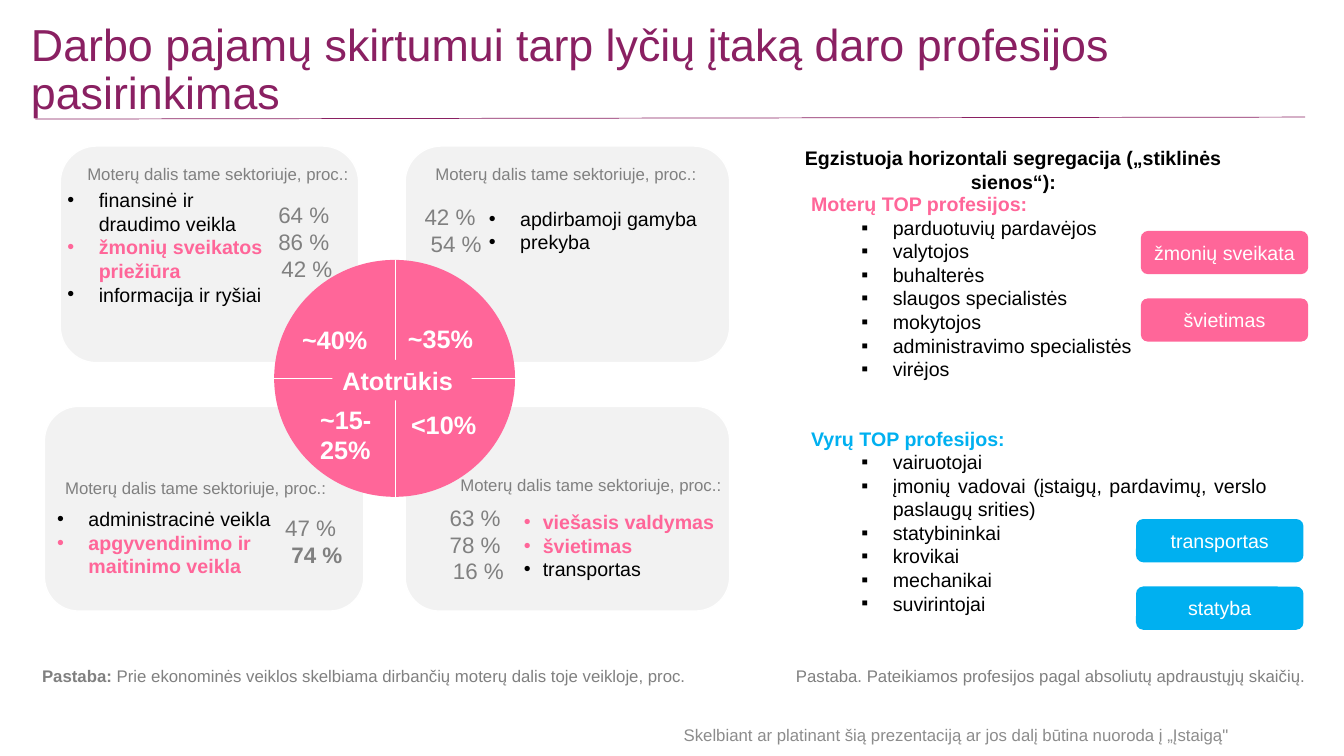
from dataclasses import dataclass, field

from lxml import etree
from pptx import Presentation
from pptx.dml.color import RGBColor
from pptx.enum.shapes import MSO_CONNECTOR, MSO_SHAPE
from pptx.enum.text import MSO_ANCHOR, MSO_AUTO_SIZE, PP_ALIGN
from pptx.oxml.ns import qn
from pptx.util import Cm, Pt

LEFT, CENTER, JUSTIFY = PP_ALIGN.LEFT, PP_ALIGN.CENTER, PP_ALIGN.JUSTIFY
TOP, MIDDLE = MSO_ANCHOR.TOP, MSO_ANCHOR.MIDDLE
GROW, FIXED = MSO_AUTO_SIZE.SHAPE_TO_FIT_TEXT, MSO_AUTO_SIZE.NONE
ROUNDED, OVAL, RECT = MSO_SHAPE.ROUNDED_RECTANGLE, MSO_SHAPE.OVAL, MSO_SHAPE.RECTANGLE
STRAIGHT = MSO_CONNECTOR.STRAIGHT

PLUM = RGBColor(0x8A, 0x20, 0x62)
PINK = RGBColor(0xFF, 0x66, 0x99)
BLUE = RGBColor(0x00, 0xB0, 0xF0)
GRAY = RGBColor(0x80, 0x80, 0x80)
FOOTER_GRAY = RGBColor(0x8C, 0x8C, 0x8C)
CARD_GRAY = RGBColor(0xF2, 0xF2, 0xF2)
BLACK = RGBColor(0, 0, 0)
WHITE = RGBColor(0xFF, 0xFF, 0xFF)

Box = tuple[float, float, float, float]


@dataclass
class Run:
    text: str
    color: RGBColor = BLACK
    bold: bool = False


@dataclass
class Para:
    runs: list[Run]
    fmt: dict = field(default_factory=dict)
    bullet: str = ""
    margin: float = 0
    hanging: float = 0


@dataclass
class Sector:
    card: Box
    header: tuple[float, float]
    list_box: Box
    items: list[Run]
    hanging: float
    share_box: Box
    shares: list[Run]
    share_shift: float
    gap: str
    gap_box: Box
    gap_align: PP_ALIGN = LEFT


@dataclass
class Badge:
    text: str
    left: float
    top: float
    color: RGBColor


def set_all(target, values: dict) -> None:
    for name, value in values.items():
        setattr(target, name, value)


def one(text: str, color: RGBColor = BLACK, bold: bool = False, **fmt) -> list[Para]:
    return [Para([Run(text, color, bold)], fmt)]


def write(tf, paras: list[Para], size: float, **frame) -> None:
    set_all(tf, {"word_wrap": True, **frame})
    for i, para in enumerate(paras):
        p = tf.add_paragraph() if i else tf.paragraphs[0]
        set_all(p, {"alignment": LEFT, **para.fmt})
        if para.margin:
            pPr = p._p.get_or_add_pPr()
            pPr.set("marL", str(Cm(para.margin)))
            pPr.set("indent", str(-Cm(para.hanging)))
            if para.bullet:
                etree.SubElement(pPr, qn("a:buFont")).set("typeface", "Arial")
                etree.SubElement(pPr, qn("a:buChar")).set("char", para.bullet)
        for run in para.runs:
            r = p.add_run()
            r.text = run.text
            set_all(r.font, {"name": "Arial", "size": Pt(size), "bold": run.bold})
            r.font.color.rgb = run.color


def add_text(s, box: Box, paras: list[Para], size: float, **frame) -> None:
    tb = s.shapes.add_textbox(*map(Cm, box))
    write(tb.text_frame, paras, size, **{"auto_size": GROW, **frame})


def add_block(s, kind: MSO_SHAPE, box: Box, color: RGBColor, line: RGBColor | None = None):
    sp = s.shapes.add_shape(kind, *map(Cm, box))
    sp.shadow.inherit = False
    sp.fill.solid()
    sp.fill.fore_color.rgb = color
    if line is None:
        sp.line.fill.background()
    else:
        sp.line.color.rgb = line
        sp.line.width = Pt(1)
    return sp


def add_line(s, ends: Box, color: RGBColor) -> None:
    ln = s.shapes.add_connector(STRAIGHT, *map(Cm, ends))
    ln.line.color.rgb = color
    ln.line.width = Pt(0.5)
    etree.SubElement(ln._element.spPr, qn("a:effectLst"))


def bullets(items: list[Run], char: str, margin: float, hanging: float, **fmt) -> list[Para]:
    return [Para([item], fmt, char, margin, hanging) for item in items]


def share_paras(shares: list[Run], shift: float) -> list[Para]:
    paras = [Para([share], {"alignment": CENTER}) for share in shares]
    paras[-1].margin = shift
    return paras


def profession_paras(title: str, color: RGBColor, names: list[str], before: float) -> list[Para]:
    head = one(title, color, True, alignment=JUSTIFY, space_before=Pt(before))
    return head + bullets([Run(n) for n in names], "▪", 2.06, 0.79, alignment=JUSTIFY, level=1)


SECTORS = [
    Sector((1.52, 3.68, 7.52, 5.46), (1.42, 3.99), (1.45, 4.62, 5.82, 3.84),
           [Run("finansinė ir draudimo veikla"), Run("žmonių sveikatos priežiūra", PINK, True),
            Run("informacija ir ryšiai")], 0.79,
           (6.48, 4.95, 2.51, 2.31), [Run("64 %", GRAY), Run("86 %", GRAY), Run("42 %", GRAY)], 0.16,
           "~40%", (6.96, 8.05, 2.95, 1.02), CENTER),
    Sector((10.21, 3.68, 8.18, 5.46), (10.19, 4.01), (12.07, 5.08, 6.22, 1.45),
           [Run("apdirbamoji gamyba"), Run("prekyba")], 0.79,
           (10.24, 5, 2.51, 1.63), [Run("42 %", GRAY), Run("54 %", GRAY)], 0.31,
           "~35%", (10.03, 8.03, 2.95, 1.02)),
    Sector((1.12, 10.24, 8.05, 5.16), (0.86, 11.91), (1.19, 12.65, 5.94, 2.06),
           [Run("administracinė veikla"), Run("apgyvendinimo ir maitinimo veikla", PINK, True)], 0.79,
           (6.73, 12.83, 2.51, 1.63), [Run("47 %", GRAY), Run("74 %", GRAY, True)], 0.31,
           "~15-25%", (7.82, 10.06, 2.95, 1.8)),
    Sector((10.21, 10.24, 8.18, 5.16), (10.82, 11.84), (12.95, 12.73, 5.54, 2.06),
           [Run("viešasis valdymas", PINK, True), Run("švietimas", PINK, True), Run("transportas")], 0.48,
           (10.8, 12.57, 2.51, 2.31), [Run("63 %", GRAY), Run("78 %", GRAY), Run("16 %", GRAY)], 0.16,
           "<10%", (10.11, 10.19, 2.95, 1.02)),
]
WOMEN = ["parduotuvių pardavėjos", "valytojos", "buhalterės", "slaugos specialistės",
         "mokytojos", "administravimo specialistės", "virėjos"]
MEN = ["vairuotojai", "įmonių vadovai (įstaigų, pardavimų, verslo paslaugų srities)",
       "statybininkai", "krovikai", "mechanikai", "suvirintojai"]
BADGES = [
    Badge("žmonių sveikata", 28.75, 5.82, PINK),
    Badge("švietimas", 28.75, 7.52, PINK),
    Badge("transportas", 28.63, 13.08, BLUE),
    Badge("statyba", 28.63, 14.78, BLUE),
]


def main() -> None:
    prs = Presentation()
    prs.slide_width, prs.slide_height = Cm(33.87), Cm(19.05)
    s = prs.slides.add_slide(prs.slide_layouts[6])

    # Title and rule
    add_text(s, (0.53, 0.66, 32.46, 2.26),
             one("Darbo pajamų skirtumui tarp lyčių įtaką daro profesijos pasirinkimas",
                 PLUM, line_spacing=0.9),
             32, vertical_anchor=MIDDLE, auto_size=FIXED)
    add_line(s, (0.89, 3, 32.89, 2.95), PLUM)

    # Sector cards under the pay gap circle
    for sector in SECTORS:
        add_block(s, ROUNDED, sector.card, CARD_GRAY, WHITE)
    add_block(s, OVAL, (6.91, 6.55, 6.07, 5.97), PINK)
    add_line(s, (9.96, 6.55, 9.96, 12.52), WHITE)
    add_line(s, (6.91, 9.53, 13, 9.53), WHITE)
    center = add_block(s, RECT, (8.38, 9.07, 3.51, 1.02), PINK)
    write(center.text_frame, one("Atotrūkis", WHITE, True), 18, vertical_anchor=TOP, auto_size=GROW)

    # Sector texts
    for sector in SECTORS:
        add_text(s, (*sector.header, 8.15, 0.76),
                 one("Moterų dalis tame sektoriuje, proc.:", GRAY, alignment=CENTER), 12)
        add_text(s, sector.list_box, bullets(sector.items, "•", sector.hanging, sector.hanging), 14)
        add_text(s, sector.share_box, share_paras(sector.shares, sector.share_shift), 16,
                 margin_right=Cm(0.25 + sector.share_shift))
        add_text(s, sector.gap_box, one(sector.gap, WHITE, True, alignment=sector.gap_align), 18)

    # Professions
    add_text(s, (18.94, 3.56, 13.2, 0.86),
             one("Egzistuoja horizontali segregacija („stiklinės sienos“):",
                 bold=True, alignment=CENTER), 14)
    add_text(s, (20.19, 4.72, 11.99, 11.63),
             profession_paras("Moterų TOP profesijos:", PINK, WOMEN, 0)
             + profession_paras("Vyrų TOP profesijos:", BLUE, MEN, 33), 14)
    for badge in BADGES:
        sp = add_block(s, ROUNDED, (badge.left, badge.top, 4.22, 1.09), badge.color)
        write(sp.text_frame, one(badge.text, WHITE, alignment=CENTER), 14, vertical_anchor=MIDDLE)

    # Notes and footer
    add_text(s, (0.81, 16.64, 17.27, 0.76),
             [Para([Run("Pastaba:", GRAY, True),
                    Run(" Prie ekonominės veiklos skelbiama dirbančių moterų dalis toje veikloje, proc.", GRAY)],
                   {"alignment": JUSTIFY})], 12)
    add_text(s, (19.81, 16.64, 14.05, 0.76),
             one("Pastaba. Pateikiamos profesijos pagal absoliutų apdraustųjų skaičių.",
                 GRAY, alignment=JUSTIFY), 12)
    add_text(s, (16.18, 18.01, 15.85, 1.02),
             one('Skelbiant ar platinant šią prezentaciją ar jos dalį būtina nuoroda į „Įstaigą"',
                 FOOTER_GRAY, alignment=CENTER), 12, vertical_anchor=MIDDLE, auto_size=FIXED)

    prs.save("out.pptx")


if __name__ == "__main__":
    main()
